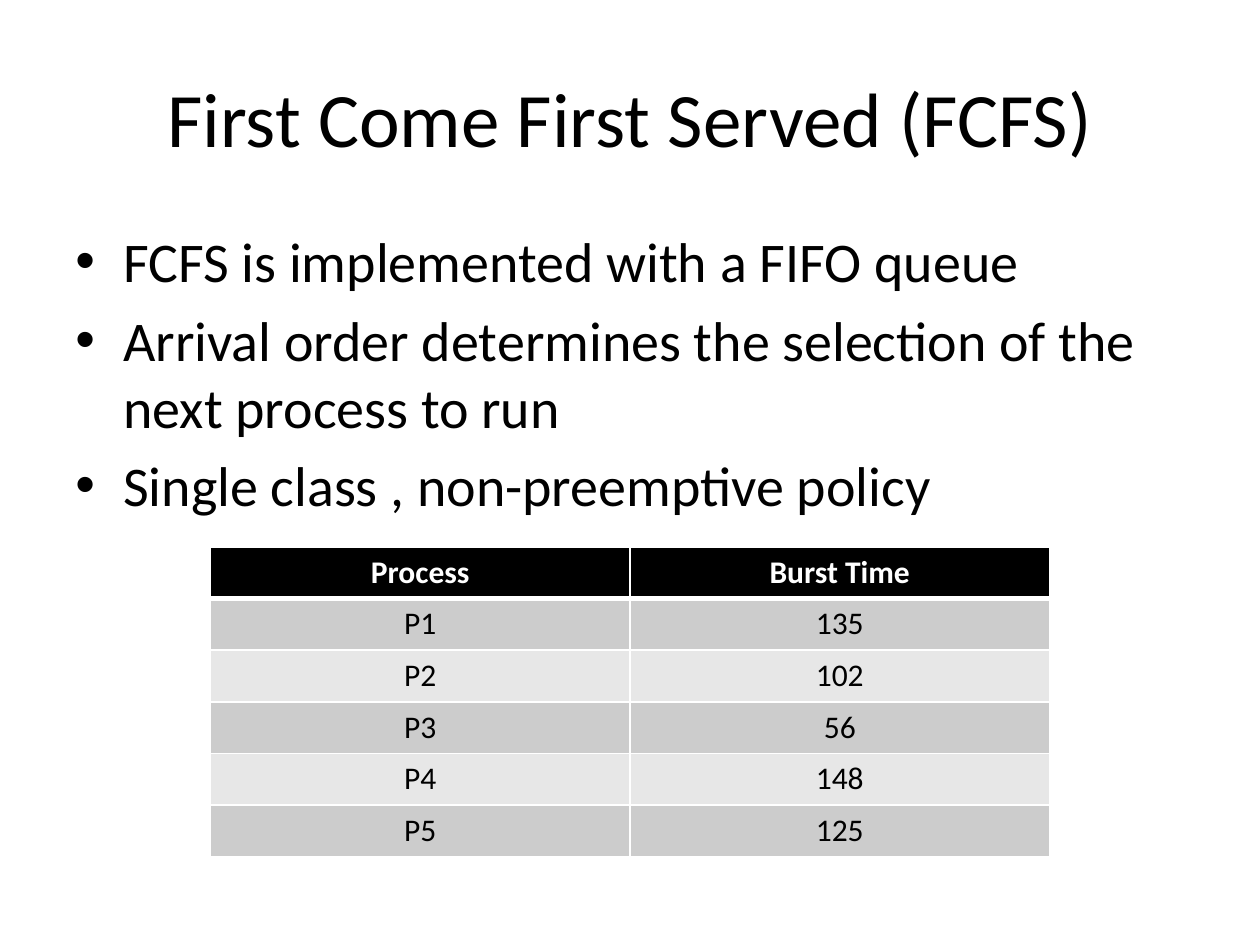
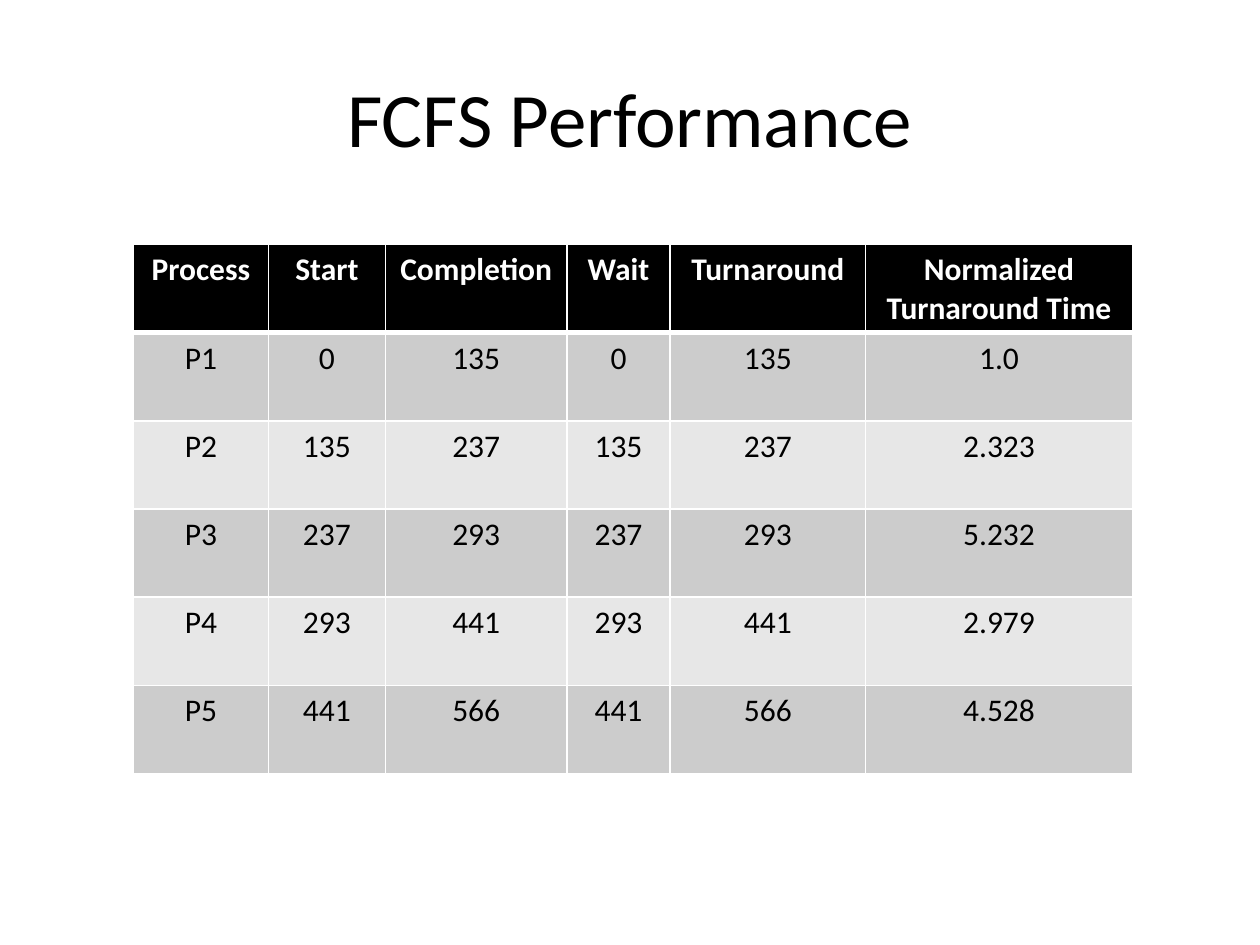
from lxml.etree import SubElement
from pptx import Presentation
from pptx.dml.color import RGBColor
from pptx.enum.text import MSO_ANCHOR, PP_ALIGN
from pptx.oxml.ns import qn
from pptx.util import Inches, Pt

SLIDES = [
    {
        "title": "First Come First Served (FCFS)",
        "bullets": [
            "FCFS is implemented with a FIFO queue",
            "Arrival order determines the selection of the next process to run",
            "Single class , non-preemptive policy",
        ],
        "table": [
            ("Process", "Burst Time"),
            ("P1", "135"),
            ("P2", "102"),
            ("P3", "56"),
            ("P4", "148"),
            ("P5", "125"),
        ],
        "origin": (1.67, 4.34),
        "cols": (3.33, 3.33),
        "row_height": 0.41,
    },
    {
        "title": "FCFS Performance",
        "bullets": [],
        "table": [
            ("Process", "Start", "Completion", "Wait", "Turnaround",
             "Normalized Turnaround Time"),
            ("P1", "0", "135", "0", "135", "1.0"),
            ("P2", "135", "237", "135", "237", "2.323"),
            ("P3", "237", "293", "237", "293", "5.232"),
            ("P4", "293", "441", "293", "441", "2.979"),
            ("P5", "441", "566", "441", "566", "4.528"),
        ],
        "origin": (1.06, 1.94),
        "cols": (1.07, 0.93, 1.44, 0.82, 1.55, 2.12),
        "row_height": 0.7,
    },
]

WIDTH, HEIGHT = 10, 7.5
MARGIN = 0.05 * WIDTH
TITLE_TOP, TITLE_HEIGHT = 0.3, 1.25
BODY_TOP, BODY_HEIGHT = 1.75, 4.95
INDENT = 0.38
FONT = "Calibri"
TITLE_SIZE, BODY_SIZE, TABLE_SIZE = 44, 32, 18
BLACK, WHITE = "000000", "FFFFFF"
BANDS = ("CCCCCC", "E7E7E7")
RULE, HEADER_RULE = 1, 3


def rgb(color):
    return RGBColor.from_string(color)


def style(p, size, color=BLACK, bold=False):
    for r in p.runs:
        r.font.name, r.font.size, r.font.bold = FONT, Pt(size), bold
        r.font.color.rgb = rgb(color)


def add_text_frame(s, top, height):
    """Add a text box between the side margins and return its frame."""
    box = s.shapes.add_textbox(Inches(MARGIN), Inches(top),
                               Inches(WIDTH - 2 * MARGIN), Inches(height))
    tf = box.text_frame
    tf.word_wrap = True
    return tf


def add_title(s, text):
    tf = add_text_frame(s, TITLE_TOP, TITLE_HEIGHT)
    tf.vertical_anchor = MSO_ANCHOR.MIDDLE
    tf.text = text
    p = tf.paragraphs[0]
    p.alignment = PP_ALIGN.CENTER
    style(p, TITLE_SIZE)


def add_bullets(s, lines):
    tf = add_text_frame(s, BODY_TOP, BODY_HEIGHT)
    tf.text = "\n".join(lines)
    for p in tf.paragraphs:
        p.space_before = Pt(0.2 * BODY_SIZE)
        style(p, BODY_SIZE)
        pPr = p._p.get_or_add_pPr()
        pPr.set("marL", str(Inches(INDENT)))
        pPr.set("indent", str(-Inches(INDENT)))
        SubElement(pPr, qn("a:buFont"), typeface="Arial")
        SubElement(pPr, qn("a:buChar"), char="•")


def set_borders(cell, top, bottom):
    """Rule the four sides of a cell in white; widths are in points."""
    tcPr = cell._tc.get_or_add_tcPr()
    for side, width in (("L", RULE), ("R", RULE), ("T", top), ("B", bottom)):
        ln = SubElement(tcPr, qn(f"a:ln{side}"), w=str(Pt(width)))
        SubElement(SubElement(ln, qn("a:solidFill")), qn("a:srgbClr"), val=WHITE)


def add_table(s, rows, origin, cols, row_height):
    left, top = origin
    table = s.shapes.add_table(
        len(rows), len(cols), Inches(left), Inches(top),
        Inches(sum(cols)), Inches(row_height * len(rows))).table
    for column, width in zip(table.columns, cols):
        column.width = Inches(width)
    for i, row in enumerate(rows):
        header = i == 0
        for j, text in enumerate(row):
            cell = table.cell(i, j)
            set_borders(cell, top=HEADER_RULE if i == 1 else RULE,
                        bottom=HEADER_RULE if header else RULE)
            cell.fill.solid()
            cell.fill.fore_color.rgb = rgb(BLACK if header else BANDS[(i - 1) % 2])
            cell.text_frame.text = text
            p = cell.text_frame.paragraphs[0]
            p.alignment = PP_ALIGN.CENTER
            style(p, TABLE_SIZE, WHITE if header else BLACK, bold=header)


def main():
    prs = Presentation()
    prs.slide_width, prs.slide_height = Inches(WIDTH), Inches(HEIGHT)
    for content in SLIDES:
        s = prs.slides.add_slide(prs.slide_layouts[6])
        add_title(s, content["title"])
        if content["bullets"]:
            add_bullets(s, content["bullets"])
        add_table(s, content["table"], content["origin"], content["cols"],
                  content["row_height"])
    prs.save("out.pptx")


if __name__ == "__main__":
    main()
